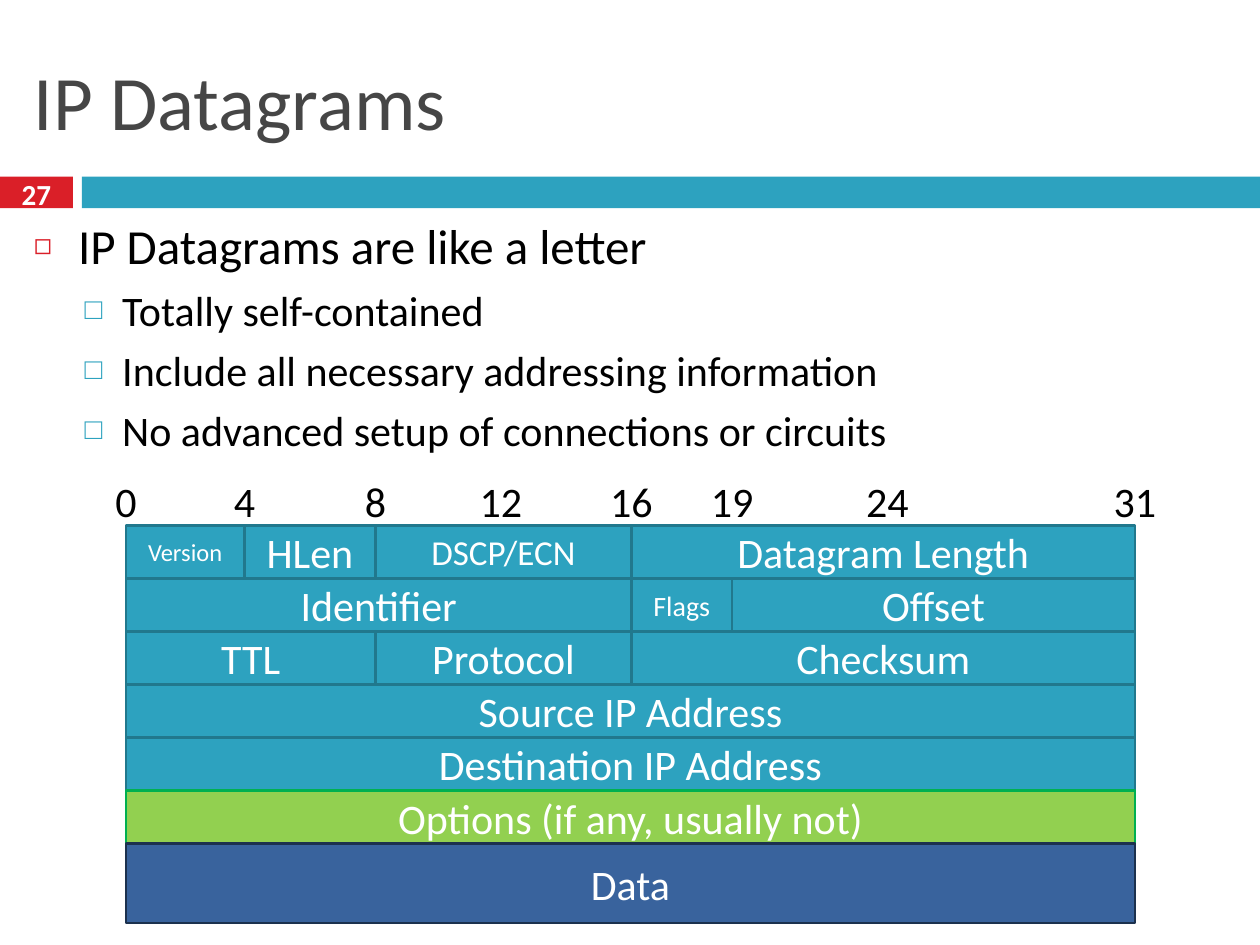
from dataclasses import dataclass

from lxml import etree
from pptx import Presentation
from pptx.dml.color import RGBColor
from pptx.enum.shapes import MSO_SHAPE
from pptx.enum.text import MSO_ANCHOR, MSO_AUTO_SIZE, PP_ALIGN
from pptx.oxml.ns import qn
from pptx.util import Cm, Pt

RECTANGLE = MSO_SHAPE.RECTANGLE
MIDDLE, TOP = MSO_ANCHOR.MIDDLE, MSO_ANCHOR.TOP
LEFT, CENTER = PP_ALIGN.LEFT, PP_ALIGN.CENTER
NO_AUTOFIT = MSO_AUTO_SIZE.NONE


@dataclass(frozen=True)
class Theme:
    """Fonts, type sizes and colours of the slide."""

    font: str = "Calibri"
    title_size: float = 44
    body_size: float = 28
    text_size: float = 24
    medium_size: float = 20
    number_size: float = 16.6
    small_size: float = 16
    tiny_size: float = 14
    title: str = "464646"
    black: str = "000000"
    white: str = "FFFFFF"
    red: str = "DA1F28"
    teal: str = "2DA2BF"
    teal_edge: str = "21788D"
    green: str = "92D050"
    green_edge: str = "00B050"
    blue: str = "39639D"
    blue_edge: str = "1C314E"


THEME = Theme()
BIT_EDGES = {0: 2.54, 4: 4.93, 8: 7.57, 12: 10.1, 16: 12.73,
             19: 14.76, 24: 17.89, 31: 22.88}
HEADER_TOP = 10.59
ROW_HEIGHT = 1.07
DATA_HEIGHT = 1.6
HEADER_ROWS = [
    [(0, 4, "Version", THEME.tiny_size), (4, 8, "HLen", THEME.text_size),
     (8, 16, "DSCP/ECN", THEME.medium_size),
     (16, 31, "Datagram Length", THEME.text_size)],
    [(0, 16, "Identifier", THEME.text_size), (16, 19, "Flags", THEME.small_size),
     (19, 31, "Offset", THEME.text_size)],
    [(0, 8, "TTL", THEME.text_size), (8, 16, "Protocol", THEME.text_size),
     (16, 31, "Checksum", THEME.text_size)],
    [(0, 31, "Source IP Address", THEME.text_size)],
    [(0, 31, "Destination IP Address", THEME.text_size)],
]
BULLETS = [
    (0, "IP Datagrams are like a letter"),
    (1, "Totally self-contained"),
    (1, "Include all necessary addressing information"),
    (1, "No advanced setup of connections or circuits"),
]


def write_text(paragraph, text, size=THEME.text_size, color=THEME.black,
               bold=False, align=CENTER):
    """Put one formatted run into a paragraph."""
    paragraph.alignment = align
    run = paragraph.add_run()
    run.text = text
    run.font.name = THEME.font
    run.font.size = Pt(size)
    run.font.bold = bold
    run.font.color.rgb = RGBColor.from_string(color)


def add_box(slide, left, top, width, height, fill, edge=None):
    """Add a flat rectangle with an optional outline."""
    shape = slide.shapes.add_shape(RECTANGLE, Cm(left), Cm(top), Cm(width), Cm(height))
    shape.shadow.inherit = False
    shape.fill.solid()
    shape.fill.fore_color.rgb = RGBColor.from_string(fill)
    if edge:
        shape.line.color.rgb = RGBColor.from_string(edge)
        shape.line.width = Pt(1.5)
    else:
        shape.line.fill.background()
    return shape


def add_field(slide, first, last, top, height, text, size=THEME.text_size,
              fill=THEME.teal, edge=THEME.teal_edge):
    """Add a header field that spans two bit edges."""
    left = BIT_EDGES[first]
    shape = add_box(slide, left, top, BIT_EDGES[last] - left, height, fill, edge)
    shape.text_frame.vertical_anchor = MIDDLE
    write_text(shape.text_frame.paragraphs[0], text, size=size, color=THEME.white)


def add_label(slide, left, top, width, height, text, **text_format):
    """Add a centred text box."""
    frame = slide.shapes.add_textbox(Cm(left), Cm(top), Cm(width), Cm(height)).text_frame
    frame.word_wrap = True
    frame.vertical_anchor = MIDDLE
    write_text(frame.paragraphs[0], text, **text_format)


def place_placeholder(placeholder, left, top, width, height, anchor):
    """Move a placeholder and return its text frame."""
    placeholder.left, placeholder.top = Cm(left), Cm(top)
    placeholder.width, placeholder.height = Cm(width), Cm(height)
    frame = placeholder.text_frame
    frame.auto_size = NO_AUTOFIT
    frame.vertical_anchor = anchor
    return frame


def set_bullet(paragraph, character, color, percent, margin, indent):
    """Give a paragraph its bullet and hanging indent."""
    properties = paragraph._p.get_or_add_pPr()
    properties.set("marL", str(Cm(margin)))
    properties.set("indent", str(Cm(-indent)))
    bullet_color = etree.SubElement(properties, qn("a:buClr"))
    etree.SubElement(bullet_color, qn("a:srgbClr"), val=color)
    etree.SubElement(properties, qn("a:buSzPct"), val=str(percent * 1000))
    etree.SubElement(properties, qn("a:buChar"), char=character)


def add_bullets(frame):
    """Fill the body with its two-level list."""
    for index, (level, text) in enumerate(BULLETS):
        paragraph = frame.add_paragraph() if index else frame.paragraphs[0]
        paragraph.level = level
        paragraph.space_before = Pt(5.5 if level else 7)
        if level:
            set_bullet(paragraph, "□", THEME.teal, 70, 1.78, 0.76)
        else:
            set_bullet(paragraph, "◻", THEME.red, 60, 0.89, 0.89)
        size = THEME.text_size if level else THEME.body_size
        write_text(paragraph, text, size=size, align=LEFT)


def add_header_diagram(slide):
    """Draw the datagram rows under their bit positions."""
    for bit, center in BIT_EDGES.items():
        add_label(slide, center - 0.83, 9.25, 1.66, 1.68, str(bit))
    top = HEADER_TOP
    for row in HEADER_ROWS:
        for first, last, text, size in row:
            add_field(slide, first, last, top, ROW_HEIGHT, text, size=size)
        top += ROW_HEIGHT
    add_field(slide, 0, 31, top, ROW_HEIGHT, "Options (if any, usually not)",
              fill=THEME.green, edge=THEME.green_edge)
    add_field(slide, 0, 31, top + ROW_HEIGHT, DATA_HEIGHT, "Data",
              fill=THEME.blue, edge=THEME.blue_edge)


def main():
    """Build and save the slide."""
    presentation = Presentation()
    presentation.slide_width, presentation.slide_height = Cm(25.4), Cm(19.05)
    slide = presentation.slides.add_slide(presentation.slide_layouts[1])
    title = place_placeholder(slide.shapes.title, 0.43, 0.64, 24.56, 2.74, MIDDLE)
    write_text(title.paragraphs[0], "IP Datagrams", size=THEME.title_size,
               color=THEME.title, align=LEFT)
    add_bullets(place_placeholder(slide.placeholders[1], 0.43, 4.22, 24.56, 5.72, TOP))
    add_box(slide, 0, 3.56, 1.47, 0.64, THEME.red)
    add_box(slide, 1.65, 3.56, 23.75, 0.64, THEME.teal)
    add_label(slide, 0, 3.48, 1.47, 0.84, "27", size=THEME.number_size,
              color=THEME.white, bold=True)
    add_header_diagram(slide)
    presentation.save("out.pptx")


if __name__ == "__main__":
    main()
